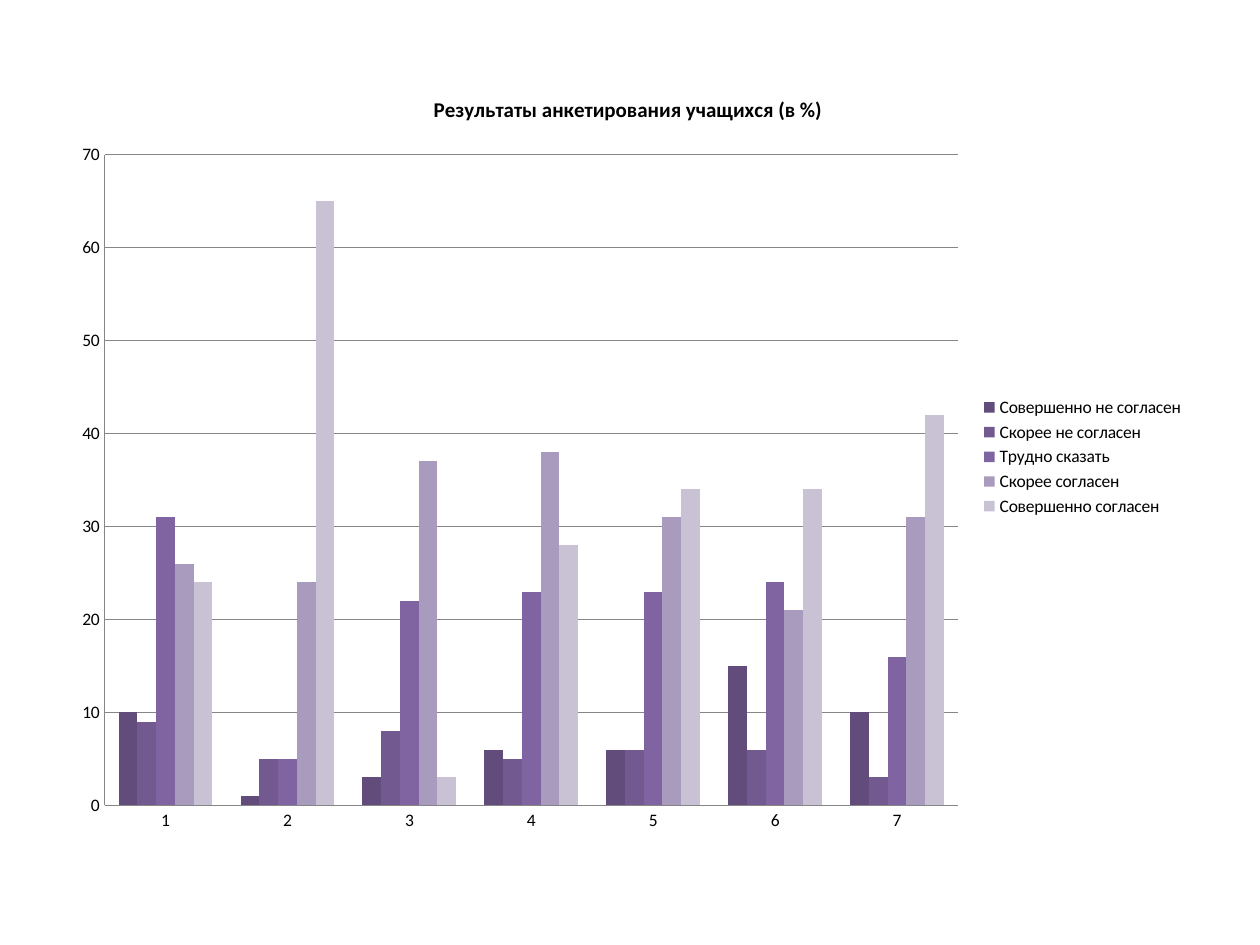
import pptx
import pptx.chart.data
import pptx.dml.color
import pptx.enum.chart
import pptx.oxml
import pptx.oxml.ns
import pptx.util
from pptx.util import Cm

FONT = "Calibri"
COLORS = {
    "text": "000000",
    "line": "868686",
    "Совершенно не согласен": "624C7B",
    "Скорее не согласен": "725990",
    "Трудно сказать": "8064A2",
    "Скорее согласен": "A99BBD",
    "Совершенно согласен": "C9C2D4",
}
QUESTIONS = ["1", "2", "3", "4", "5", "6", "7"]
ANSWERS = {
    "Совершенно не согласен": (10, 1, 3, 6, 6, 15, 10),
    "Скорее не согласен": (9, 5, 8, 5, 6, 6, 3),
    "Трудно сказать": (31, 5, 22, 23, 23, 24, 16),
    "Скорее согласен": (26, 24, 37, 38, 31, 21, 31),
    "Совершенно согласен": (24, 65, 3, 28, 34, 34, 42),
}
# Inner plot area as shares of the chart box
PLOT_BOX = {"x": 0.04, "y": 0.11, "w": 0.75, "h": 0.84}


def color(name):
    return pptx.dml.color.RGBColor.from_string(COLORS[name])


def style_font(font, size, bold=False):
    font.name = FONT
    font.size = pptx.util.Pt(size)
    font.bold = bold
    font.color.rgb = color("text")


def style_line(line):
    line.color.rgb = color("line")
    line.width = pptx.util.Pt(0.75)


def place_plot(chart, box):
    plot_area = chart.plots[0]._element.getparent()
    for old_layout in plot_area.findall(pptx.oxml.ns.qn("c:layout")):
        plot_area.remove(old_layout)
    edges = "".join(f'<c:{key} val="{share}"/>' for key, share in box.items())
    layout = pptx.oxml.parse_xml(
        f'<c:layout {pptx.oxml.ns.nsdecls("c")}><c:manualLayout>'
        '<c:layoutTarget val="inner"/><c:xMode val="edge"/><c:yMode val="edge"/>'
        f"{edges}</c:manualLayout></c:layout>"
    )
    plot_area.insert(0, layout)


def add_survey_chart(slide, left, top, width, height):
    survey = pptx.chart.data.CategoryChartData()
    survey.categories = QUESTIONS
    for answer, shares in ANSWERS.items():
        survey.add_series(answer, shares)
    chart = slide.shapes.add_chart(
        pptx.enum.chart.XL_CHART_TYPE.COLUMN_CLUSTERED,
        left, top, width, height, survey,
    ).chart
    style_font(chart.font, 10)

    # Heading
    heading = chart.chart_title.text_frame
    heading.text = "Результаты анкетирования учащихся (в %)"
    style_font(heading.paragraphs[0].runs[0].font, 12, bold=True)
    chart.chart_title.include_in_layout = False

    # Columns
    columns = chart.plots[0]
    columns.gap_width = 150
    columns.overlap = 0
    columns.vary_by_categories = False
    for answer in columns.series:
        answer.format.fill.solid()
        answer.format.fill.fore_color.rgb = color(answer.name)

    # Axes and gridlines
    for axis in (chart.category_axis, chart.value_axis):
        axis.major_tick_mark = pptx.enum.chart.XL_TICK_MARK.NONE
        axis.minor_tick_mark = pptx.enum.chart.XL_TICK_MARK.NONE
        style_line(axis.format.line)
    shares_axis = chart.value_axis
    shares_axis.minimum_scale = 0
    shares_axis.maximum_scale = 70
    shares_axis.major_unit = 10
    shares_axis.has_major_gridlines = True
    style_line(shares_axis.major_gridlines.format.line)

    # Legend
    chart.has_legend = True
    chart.legend.position = pptx.enum.chart.XL_LEGEND_POSITION.RIGHT
    chart.legend.include_in_layout = False
    style_font(chart.legend.font, 10)

    place_plot(chart, PLOT_BOX)


def main():
    deck = pptx.Presentation()
    deck.slide_width, deck.slide_height = Cm(25.4), Cm(19.05)
    slide = deck.slides.add_slide(deck.slide_layouts.get_by_name("Blank"))
    add_survey_chart(slide, Cm(1.19), Cm(1.4), Cm(22.94), Cm(15.62))
    deck.save("out.pptx")


if __name__ == "__main__":
    main()
